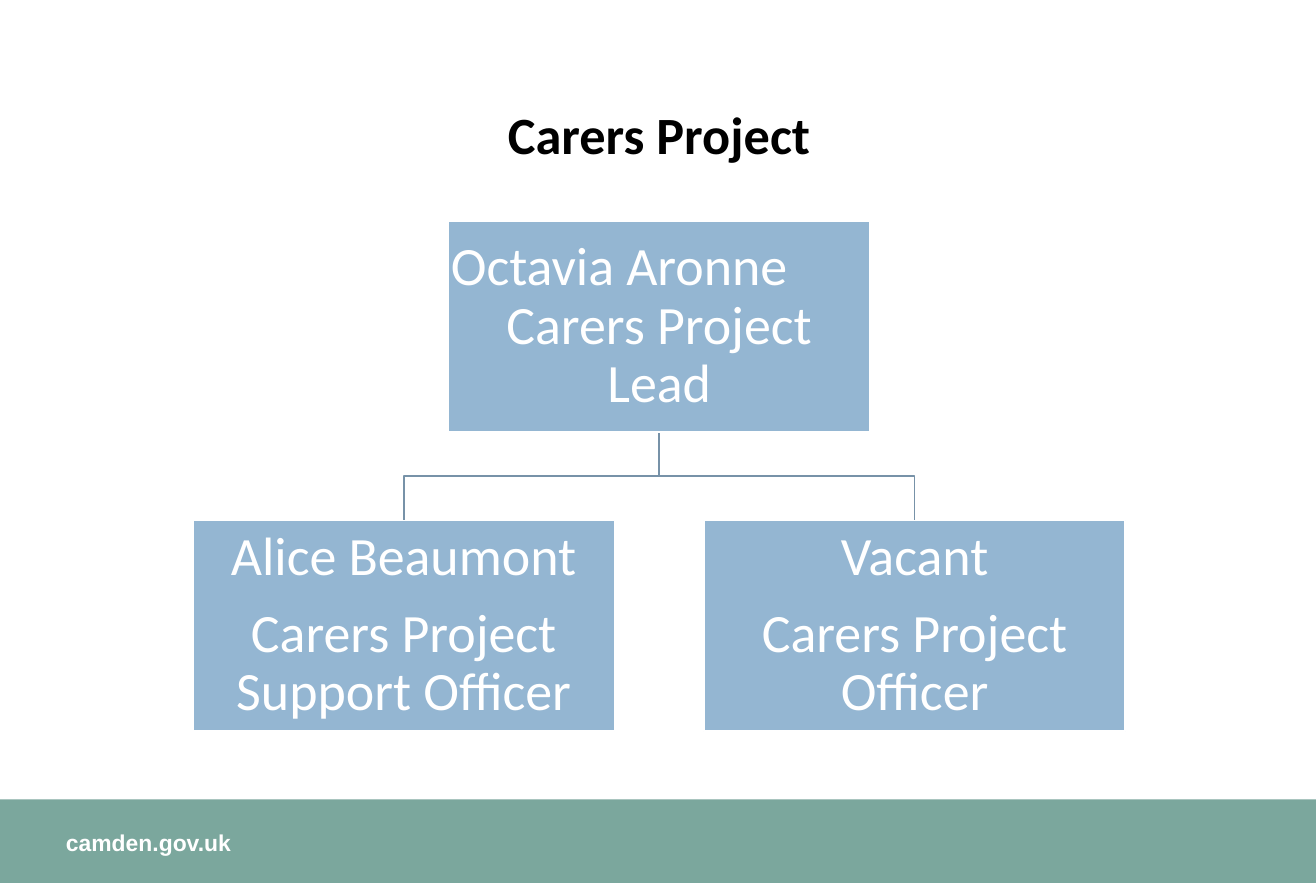
from pptx import Presentation
from pptx.dml.color import RGBColor
from pptx.enum.shapes import MSO_SHAPE
from pptx.enum.text import MSO_ANCHOR, PP_ALIGN
from pptx.util import Inches, Pt

RECT = MSO_SHAPE.RECTANGLE
TOP, MIDDLE = MSO_ANCHOR.TOP, MSO_ANCHOR.MIDDLE
LEFT, CENTER = PP_ALIGN.LEFT, PP_ALIGN.CENTER
COLORS = {"band": "7BA79D", "box": "94B6D2", "line": "7792A8", "white": "FFFFFF", "black": "000000"}
FORMATS = {
    "title": {"name": "Calibri", "size": Pt(32), "bold": True},
    "box": {"name": "Calibri", "size": Pt(33)},
    "footer": {"name": "Arial", "size": Pt(14), "bold": True},
}
LEAD = [("Octavia Aronne", LEFT, 0), ("Carers Project Lead", CENTER, 0)]
OFFICERS = [
    [("Alice Beaumont", CENTER, 0), ("Carers Project Support Officer", CENTER, 11.5)],
    [("Vacant", CENTER, 0), ("Carers Project Officer", CENTER, 11.5)],
]


def rgb(name):
    """Return the named colour."""
    return RGBColor.from_string(COLORS[name])


def write(sp, lines, style, color, anchor, insets, spacing=0.9):
    """Fill a shape with (text, alignment, space before) paragraphs."""
    tf = sp.text_frame
    tf.word_wrap = True
    tf.vertical_anchor = anchor
    for side, inset in zip(("left", "top", "right", "bottom"), insets):
        setattr(tf, f"margin_{side}", Inches(inset))
    for i, (text, align, before) in enumerate(lines):
        p = tf.paragraphs[0] if i == 0 else tf.add_paragraph()
        p.alignment, p.line_spacing = align, spacing
        if before:
            p.space_before = Pt(before)
        r = p.add_run()
        r.text = text
        for key, value in FORMATS[style].items():
            setattr(r.font, key, value)
        r.font.color.rgb = rgb(color)


def add_rect(s, box, fill, line=None):
    """Add a flat rectangle."""
    sp = s.shapes.add_shape(RECT, *map(Inches, box))
    sp.shadow.inherit = False
    sp.fill.solid()
    sp.fill.fore_color.rgb = rgb(fill)
    if line:
        sp.line.color.rgb = rgb(line)
        sp.line.width = Pt(1)
    else:
        sp.line.fill.background()
    return sp


def add_title(s, box, text):
    """Add the centred heading."""
    sp = s.shapes.add_textbox(*map(Inches, box))
    write(sp, [(text, CENTER, 0)], "title", "black", MIDDLE, (0.1, 0.05, 0.1, 0.05))


def add_footer(s, box, text):
    """Add the coloured band with its web address."""
    x, y, w, h = box
    add_rect(s, box, "band")
    sp = s.shapes.add_textbox(*map(Inches, (x + w * 0.05, y + h * 0.35, w * 0.41, h / 3)))
    write(sp, [(text, LEFT, 0)], "footer", "white", TOP, (0, 0, 0.1, 0), 1)


def add_branch(s, points):
    """Draw an open elbow line through the points."""
    path = [(Inches(x), Inches(y)) for x, y in points]
    builder = s.shapes.build_freeform(*path[0])
    builder.add_line_segments(path[1:], close=False)
    sp = builder.convert_to_shape()
    sp.shadow.inherit = False
    sp.fill.background()
    sp.line.color.rgb = rgb("line")
    sp.line.width = Pt(1)


def add_org_chart(s, box, lead, officers):
    """Place the lead above an even row of officers and join them."""
    x, y, w, h = box
    bw, bh = w * 0.452, h * 0.4134
    step = (w - bw) / (len(officers) - 1)
    mid, low = x + w / 2, y + h - bh
    bend = (y + bh + low) / 2
    lefts = [x + i * step for i in range(len(officers))]
    for left in lefts:
        end = left + bw / 2
        add_branch(s, [(mid, y + bh), (mid, bend), (end, bend), (end, low)])
    places = [(mid - bw / 2, y)] + [(left, low) for left in lefts]
    for (left, top), lines in zip(places, [lead] + officers):
        sp = add_rect(s, (left, top, bw, bh), "box", "white")
        write(sp, lines, "box", "white", MIDDLE, (0.02,) * 4)


def main():
    """Build and save the slide."""
    prs = Presentation()
    w, h = 11.18, 7.5
    prs.slide_width, prs.slide_height = Inches(w), Inches(h)
    s = prs.slides.add_slide(prs.slide_layouts[6])
    add_footer(s, (0, 6.79, w, h - 6.79), "camden.gov.uk")
    add_title(s, (0.57, 0.54, 10.06, 1.25), "Carers Project")
    add_org_chart(s, (1.64, 1.88, 7.92, 4.33), LEAD, OFFICERS)
    prs.save("out.pptx")


if __name__ == "__main__":
    main()
